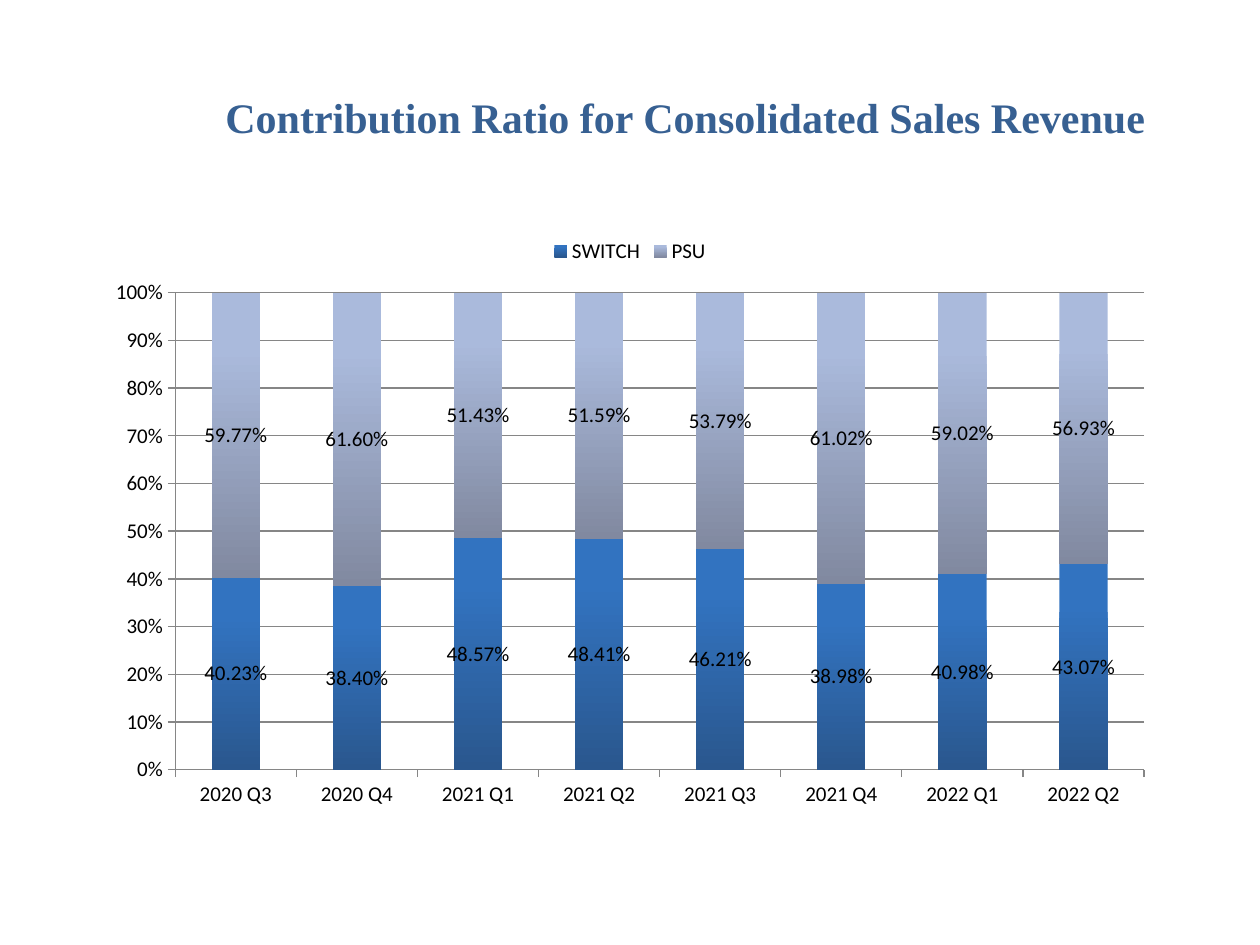
from pptx import Presentation
from pptx import util as u
from pptx.chart import data as chart_data
from pptx.dml.color import RGBColor
from pptx.enum import chart as ch, text

# Content
TITLE = "Contribution Ratio for Consolidated Sales Revenue"
QUARTERS = ["2020 Q3", "2020 Q4", "2021 Q1", "2021 Q2",
            "2021 Q3", "2021 Q4", "2022 Q1", "2022 Q2"]
SHARES = {
    "SWITCH": [0.4023, 0.384, 0.4857, 0.4841, 0.4621, 0.3898, 0.4098, 0.4307],
    "PSU": [0.5977, 0.616, 0.5143, 0.5159, 0.5379, 0.6102, 0.5902, 0.5693],
}

# Theme and layout
THEME = {
    "title": {"name": "Times New Roman", "size": 24, "bold": True, "color": "376092"},
    "chart": {"name": "Calibri", "size": 12, "bold": False, "color": "000000"},
    "axis": "868686",
    "gradients": {"SWITCH": ("3273C0", "2A578E"), "PSU": ("AABADC", "8189A0")},
}
TITLE_AREA = (1.69, 0.68, 7.56, 1.18)
CHART_AREA = (0.75, 1.78, 8.5, 4.72)


def style_font(font, style):
    values = {"name": style["name"], "size": u.Pt(style["size"]), "bold": style["bold"]}
    for name, value in values.items():
        setattr(font, name, value)
    font.color.rgb = RGBColor.from_string(style["color"])


def style_line(line):
    line.color.rgb = RGBColor.from_string(THEME["axis"])
    line.width = u.Pt(0.75)


def add_title(page):
    box = page.shapes.add_textbox(*map(u.Inches, TITLE_AREA))
    frame = box.text_frame
    frame.word_wrap = True
    frame.vertical_anchor = text.MSO_ANCHOR.TOP
    span = frame.paragraphs[0].add_run()
    span.text = TITLE
    style_font(span.font, THEME["title"])


def style_series(series):
    # Vertical gradient, light at the top
    fill = series.format.fill
    fill.gradient()
    fill.gradient_angle = 270
    for stop, color, position in zip(fill.gradient_stops,
                                     THEME["gradients"][series.name], (0.2, 1)):
        stop.color.rgb = RGBColor.from_string(color)
        stop.position = position
    series.invert_if_negative = False
    labels = series.data_labels
    formats = {"show_value": True, "number_format": "0.00%",
               "number_format_is_linked": False}
    for name, value in formats.items():
        setattr(labels, name, value)
    style_font(labels.font, THEME["chart"])


def add_share_chart(page):
    data = chart_data.CategoryChartData(number_format="0.00%")
    data.categories = QUARTERS
    for name, values in SHARES.items():
        data.add_series(name, values)
    chart = page.shapes.add_chart(ch.XL_CHART_TYPE.COLUMN_STACKED,
                                  *map(u.Inches, CHART_AREA), data).chart
    style_font(chart.font, THEME["chart"])
    chart.has_title = False

    # Legend
    chart.has_legend = True
    chart.legend.position = ch.XL_LEGEND_POSITION.TOP
    chart.legend.include_in_layout = False

    # Columns
    plot = chart.plots[0]
    for name, value in {"gap_width": 150, "overlap": 100,
                        "vary_by_categories": False}.items():
        setattr(plot, name, value)
    for series in plot.series:
        style_series(series)

    # Axes
    for axis in (chart.category_axis, chart.value_axis):
        axis.major_tick_mark = ch.XL_TICK_MARK.OUTSIDE
        axis.minor_tick_mark = ch.XL_TICK_MARK.NONE
        style_line(axis.format.line)
    scale = chart.value_axis
    for name, value in {"minimum_scale": 0, "maximum_scale": 1, "major_unit": 0.1,
                        "has_major_gridlines": True}.items():
        setattr(scale, name, value)
    style_line(scale.major_gridlines.format.line)
    scale.tick_labels.number_format = "0%"
    scale.tick_labels.number_format_is_linked = False


def main():
    deck = Presentation()
    deck.slide_width, deck.slide_height = u.Inches(10), u.Inches(7.5)
    page = deck.slides.add_slide(deck.slide_layouts[6])
    add_title(page)
    add_share_chart(page)
    deck.save("out.pptx")


if __name__ == "__main__":
    main()
